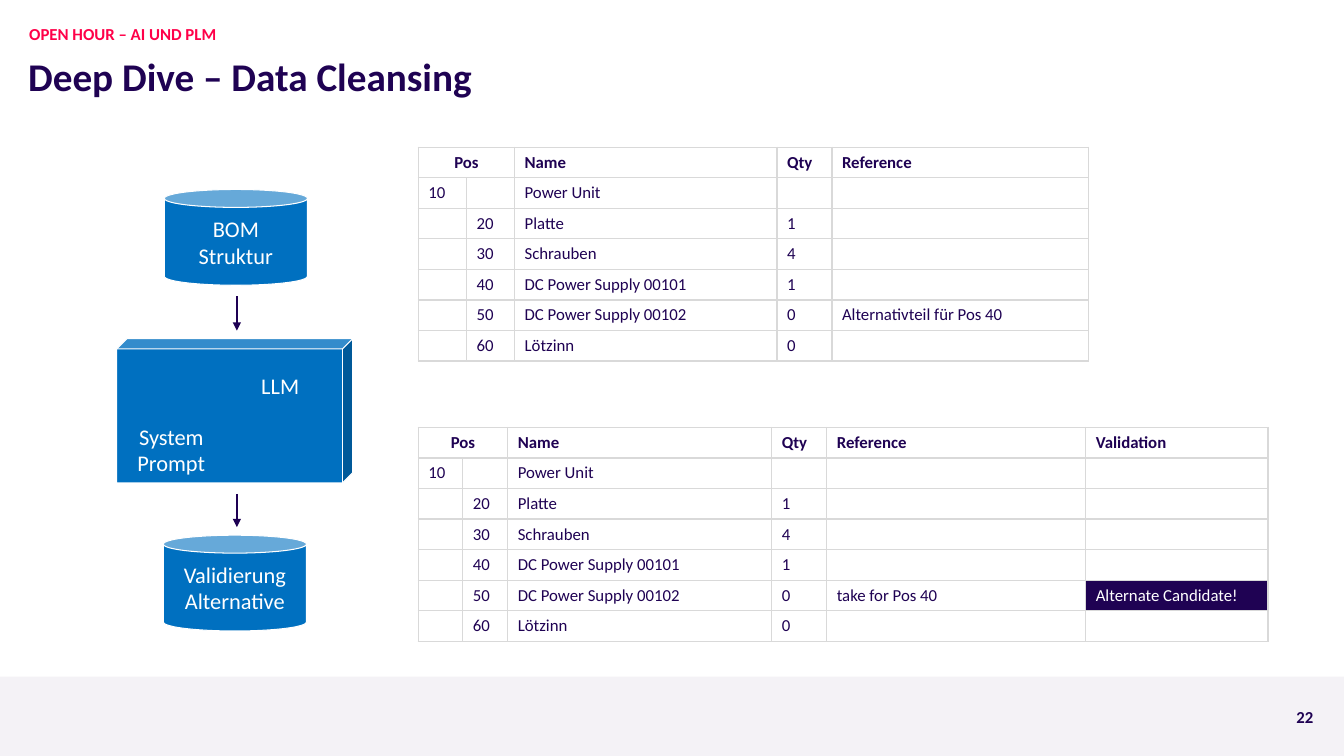
"""Build the data cleansing slide: LLM flow on the left, BOM before and after on the right."""
from typing import NamedTuple

from lxml.etree import SubElement
from pptx import Presentation
from pptx.dml.color import RGBColor
from pptx.enum.shapes import MSO_CONNECTOR as Connector, MSO_SHAPE as Shape
from pptx.enum.text import MSO_ANCHOR as Anchor, PP_ALIGN as Align
from pptx.oxml.ns import qn
from pptx.util import Pt

FONT = "Calibri"
INK = "1F0253"
ARROW_INK = "1E0053"
PINK = "FF0049"
BLUE = "0070C0"
WHITE = "FFFFFF"
GRID = "D9D9D9"
FOOTER = "F4F2F6"
ROW_HEIGHT = 21.85


class Box(NamedTuple):
    left: float
    top: float
    width: float
    height: float


class Label(NamedTuple):
    text: str
    box: Box
    size: float
    color: str
    anchor: Anchor
    align: Align = Align.LEFT
    line_spacing: float = 1.0


class Block(NamedTuple):
    kind: Shape
    box: Box
    fill: str = BLUE
    text: str = ""
    outline: str = ""
    depth: float | None = None


class Arrow(NamedTuple):
    x: float
    start: float
    end: float


class Bom(NamedTuple):
    left: float
    top: float
    widths: list[float]
    rows: list[list[str]]
    highlight: str = ""


LABELS = [
    Label("Deep Dive – Data Cleansing", Box(20.16, 37.44, 895.68, 33.12), 28, INK, Anchor.MIDDLE),
    Label("OPEN HOUR – AI UND PLM", Box(20.88, 12.24, 897.12, 19.44), 12, PINK, Anchor.BOTTOM,
          line_spacing=0.9),
    Label("22", Box(911.52, 496.08, 26.64, 23.04), 12, INK, Anchor.BOTTOM, Align.RIGHT),
]

BLOCKS = [
    Block(Shape.RECTANGLE, Box(-0.5, 483.3, 961, 56.7), FOOTER),
    Block(Shape.CAN, Box(117.36, 135.36, 102.24, 68.4), BLUE, "BOM Struktur", WHITE, 0.187),
    Block(Shape.CUBE, Box(83.4, 241.92, 168.6, 102.96), BLUE, "", WHITE, 0.071),
    Block(Shape.RECTANGLE, Box(167.76, 257.76, 64.8, 36), BLUE, "LLM"),
    Block(Shape.RECTANGLE, Box(90, 303.12, 64.8, 36), BLUE, "System Prompt"),
    Block(Shape.CAN, Box(116.64, 382.32, 102.24, 68.4), BLUE, "Validierung Alternative", WHITE, 0.187),
]

ARROWS = [Arrow(169.2, 211.68, 236.16), Arrow(169.2, 352.8, 376.56)]

HEADER = ["Pos", "", "Name", "Qty", "Reference"]
PARTS = [
    ["10", "", "Power Unit", ""],
    ["", "20", "Platte", "1"],
    ["", "30", "Schrauben", "4"],
    ["", "40", "DC Power Supply 00101", "1"],
    ["", "50", "DC Power Supply 00102", "0"],
    ["", "60", "Lötzinn", "0"],
]


def bom_rows(header: list[str], remarks: list[str]) -> list[list[str]]:
    """Join the parts with remarks that apply to position 50 only."""
    blanks = [""] * len(remarks)
    return [header] + [part + (remarks if part[1] == "50" else blanks) for part in PARTS]


BOMS = [
    Bom(298.8, 105.12, [34.4, 34.4, 187.4, 39.3, 183.3],
        bom_rows(HEADER, ["Alternativteil für Pos 40"])),
    Bom(298.8, 305.28, [31.8, 32.1, 188.6, 39.3, 185, 130.2],
        bom_rows(HEADER + ["Validation"], ["take for Pos 40", "Alternate Candidate!"]),
        "Alternate Candidate!"),
]


def rgb(color: str) -> RGBColor:
    """Turn a hex string into a colour."""
    return RGBColor.from_string(color)


def points(box: Box) -> list[Pt]:
    """Turn a box into lengths."""
    return [Pt(length) for length in box]


def write(paragraph, text: str, size: float, color: str, bold: bool = False) -> None:
    """Add one styled run."""
    run = paragraph.add_run()
    run.text = text
    run.font.name = FONT
    run.font.size = Pt(size)
    run.font.bold = bold
    run.font.color.rgb = rgb(color)


def draw_label(slide, label: Label) -> None:
    """Draw a bold text without insets."""
    frame = slide.shapes.add_textbox(*points(label.box)).text_frame
    frame.word_wrap = True
    frame.vertical_anchor = label.anchor
    frame.margin_left = frame.margin_right = frame.margin_top = frame.margin_bottom = Pt(0)
    line = frame.paragraphs[0]
    line.alignment = label.align
    line.line_spacing = label.line_spacing
    write(line, label.text, label.size, label.color, True)


def draw_block(slide, block: Block) -> None:
    """Draw a filled shape with an optional outline and caption."""
    shape = slide.shapes.add_shape(block.kind, *points(block.box))
    shape.shadow.inherit = False
    shape.fill.solid()
    shape.fill.fore_color.rgb = rgb(block.fill)
    if block.depth is not None:
        shape.adjustments[0] = block.depth
    if block.outline:
        shape.line.color.rgb = rgb(block.outline)
        shape.line.width = Pt(0.75)
    else:
        shape.line.fill.background()
    if block.text:
        frame = shape.text_frame
        frame.word_wrap = True
        frame.vertical_anchor = Anchor.MIDDLE
        frame.paragraphs[0].alignment = Align.CENTER
        write(frame.paragraphs[0], block.text, 16, WHITE)


def draw_arrow(slide, arrow: Arrow) -> None:
    """Draw a downward arrow."""
    ends = [Pt(length) for length in (arrow.x, arrow.start, arrow.x, arrow.end)]
    connector = slide.shapes.add_connector(Connector.STRAIGHT, *ends)
    connector.line.color.rgb = rgb(ARROW_INK)
    connector.line.width = Pt(1.5)
    SubElement(connector.line._get_or_add_ln(), qn("a:tailEnd"), type="triangle")
    SubElement(connector._element.spPr, qn("a:effectLst"))


def style_cell(cell, fill: str) -> None:
    """Give a cell its grid lines and fill."""
    properties = cell._tc.get_or_add_tcPr()
    for side in ("a:lnL", "a:lnR", "a:lnT", "a:lnB"):
        edge = SubElement(properties, qn(side), w=str(Pt(1)))
        SubElement(SubElement(edge, qn("a:solidFill")), qn("a:srgbClr"), val=GRID)
    cell.fill.solid()
    cell.fill.fore_color.rgb = rgb(fill)


def draw_bom(slide, bom: Bom) -> None:
    """Draw a parts table whose first heading spans both position levels."""
    size = Box(bom.left, bom.top, sum(bom.widths), ROW_HEIGHT * len(bom.rows))
    table = slide.shapes.add_table(len(bom.rows), len(bom.widths), *points(size)).table
    for column, width in zip(table.columns, bom.widths):
        column.width = Pt(width)
    for r, values in enumerate(bom.rows):
        table.rows[r].height = Pt(ROW_HEIGHT)
        for c, text in enumerate(values):
            cell = table.cell(r, c)
            marked = bool(text) and text == bom.highlight
            style_cell(cell, INK if marked else WHITE)
            line = cell.text_frame.paragraphs[0]
            if text:
                write(line, text, 12, WHITE if marked else INK, r == 0)
            else:
                SubElement(line._p, qn("a:endParaRPr"), sz="1200")
    table.cell(0, 0).merge(table.cell(0, 1))
    table.cell(0, 0).text_frame.paragraphs[0].alignment = Align.CENTER


def main() -> None:
    """Assemble and save the slide."""
    deck = Presentation()
    deck.slide_width, deck.slide_height = Pt(960), Pt(540)
    slide = deck.slides.add_slide(deck.slide_layouts[6])
    for draw, items in ((draw_block, BLOCKS), (draw_label, LABELS),
                        (draw_arrow, ARROWS), (draw_bom, BOMS)):
        for item in items:
            draw(slide, item)
    deck.save("out.pptx")


if __name__ == "__main__":
    main()
